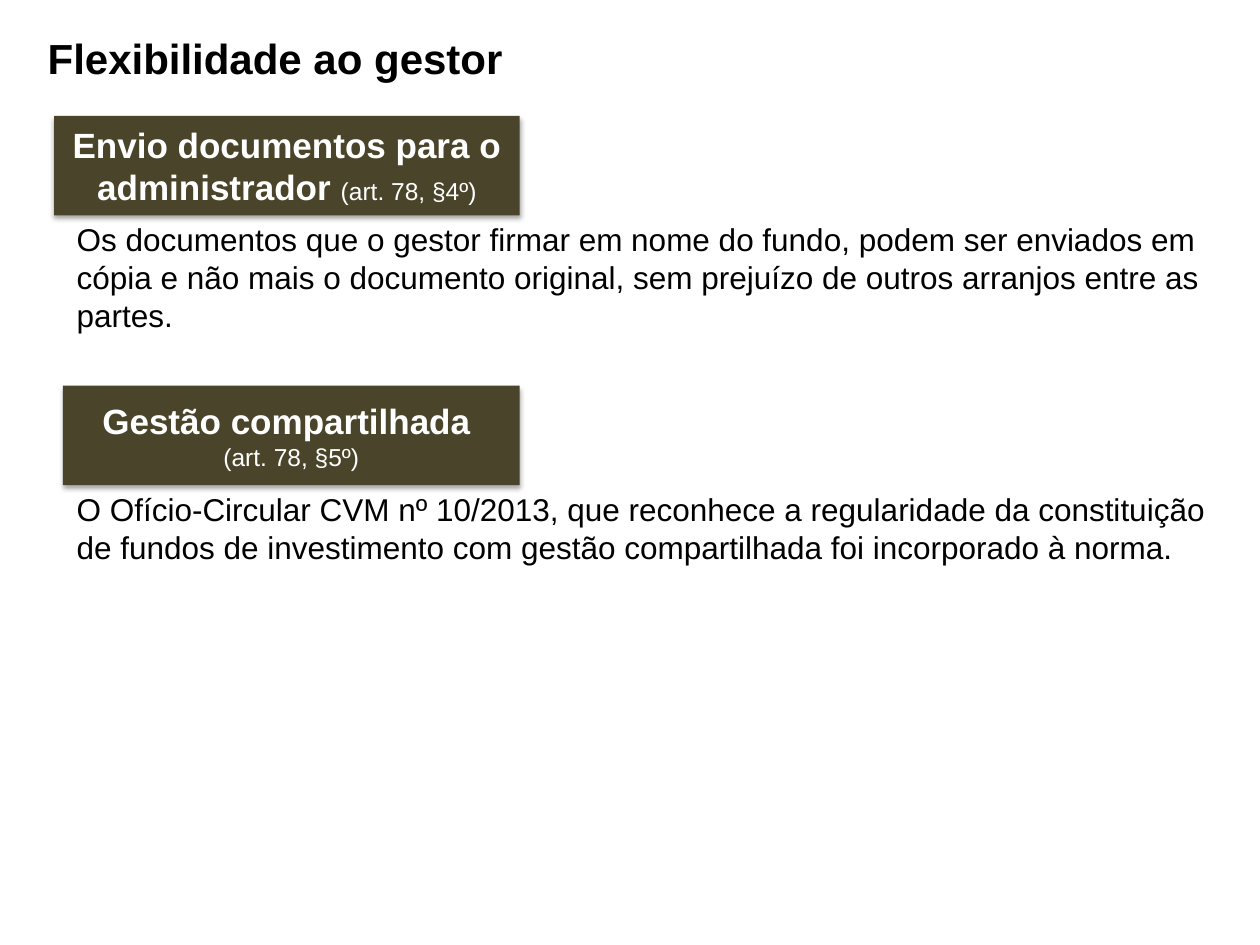
from dataclasses import dataclass

from lxml import etree
from pptx import Presentation
from pptx.dml.color import RGBColor
from pptx.enum.shapes import MSO_SHAPE as Shape
from pptx.enum.text import MSO_ANCHOR as Anchor, MSO_AUTO_SIZE as AutoSize, PP_ALIGN as Align
from pptx.oxml.ns import qn
from pptx.util import Inches, Pt


@dataclass(frozen=True)
class Theme:
    font: str = "Arial"
    olive: str = "4A452A"
    white: str = "FFFFFF"
    black: str = "000000"
    title: int = 24
    heading: int = 20
    body: int = 18
    article: int = 14


theme = Theme()


def add_text(paragraph, text, size, color=theme.black, bold=False, align=None):
    paragraph.alignment = align
    run = paragraph.add_run()
    run.text = text
    run.font.name = theme.font
    run.font.size = Pt(size)
    run.font.bold = bold
    run.font.color.rgb = RGBColor.from_string(color)


def add_shadow(shape):
    shape.shadow.inherit = False
    effects = shape._element.spPr.find(qn("a:effectLst"))
    shadow = etree.SubElement(effects, qn("a:outerShdw"), blurRad=str(Pt(3.1)),
                              dist=str(Pt(1.8)), dir="5400000", rotWithShape="0")
    color = etree.SubElement(shadow, qn("a:srgbClr"), val=theme.black)
    etree.SubElement(color, qn("a:alpha"), val="35000")


presentation = Presentation()
presentation.slide_width, presentation.slide_height = Inches(10), Inches(7.5)
slide = presentation.slides.add_slide(presentation.slide_layouts[6])

# Title
title = slide.shapes.add_textbox(Inches(0.28), Inches(0.21), Inches(3.84), Inches(0.5))
title.text_frame.word_wrap = False
title.text_frame.auto_size = AutoSize.SHAPE_TO_FIT_TEXT
add_text(title.text_frame.paragraphs[0], "Flexibilidade ao gestor", theme.title, bold=True)

# Sections: left, top, heading, article, article on its own line, body, body height
sections = [
    (0.43, 0.92, "Envio documentos para o administrador ", "(art. 78, §4º)", False,
     "Os documentos que o gestor firmar em nome do fundo, podem ser enviados em cópia e "
     "não mais o documento original, sem prejuízo de outros arranjos entre as partes.", 1.01),
    (0.5, 3.06, "Gestão compartilhada ", "(art. 78, §5º)", True,
     "O Ofício-Circular CVM nº 10/2013, que reconhece a regularidade da constituição de fundos "
     "de investimento com gestão compartilhada foi incorporado à norma.", 0.71),
]
box_right, box_height, body_offset = 4.125, 0.79, 0.78

for left, top, heading, article, own_line, body, body_height in sections:
    # Heading box
    box = slide.shapes.add_shape(Shape.RECTANGLE, Inches(left), Inches(top),
                                 Inches(box_right - left), Inches(box_height))
    box.fill.solid()
    box.fill.fore_color.rgb = RGBColor.from_string(theme.olive)
    box.line.fill.background()
    add_shadow(box)
    frame = box.text_frame
    frame.word_wrap = True
    frame.vertical_anchor = Anchor.MIDDLE
    paragraph = frame.paragraphs[0]
    add_text(paragraph, heading, theme.heading, color=theme.white, bold=True, align=Align.CENTER)
    if own_line:
        paragraph = frame.add_paragraph()
    add_text(paragraph, article, theme.article, color=theme.white, align=Align.CENTER)

    # Body text
    text_box = slide.shapes.add_textbox(Inches(0.51), Inches(top + body_offset),
                                        Inches(9.29), Inches(body_height))
    text_box.text_frame.word_wrap = True
    text_box.text_frame.auto_size = AutoSize.SHAPE_TO_FIT_TEXT
    add_text(text_box.text_frame.paragraphs[0], body, theme.body)

presentation.save("out.pptx")
